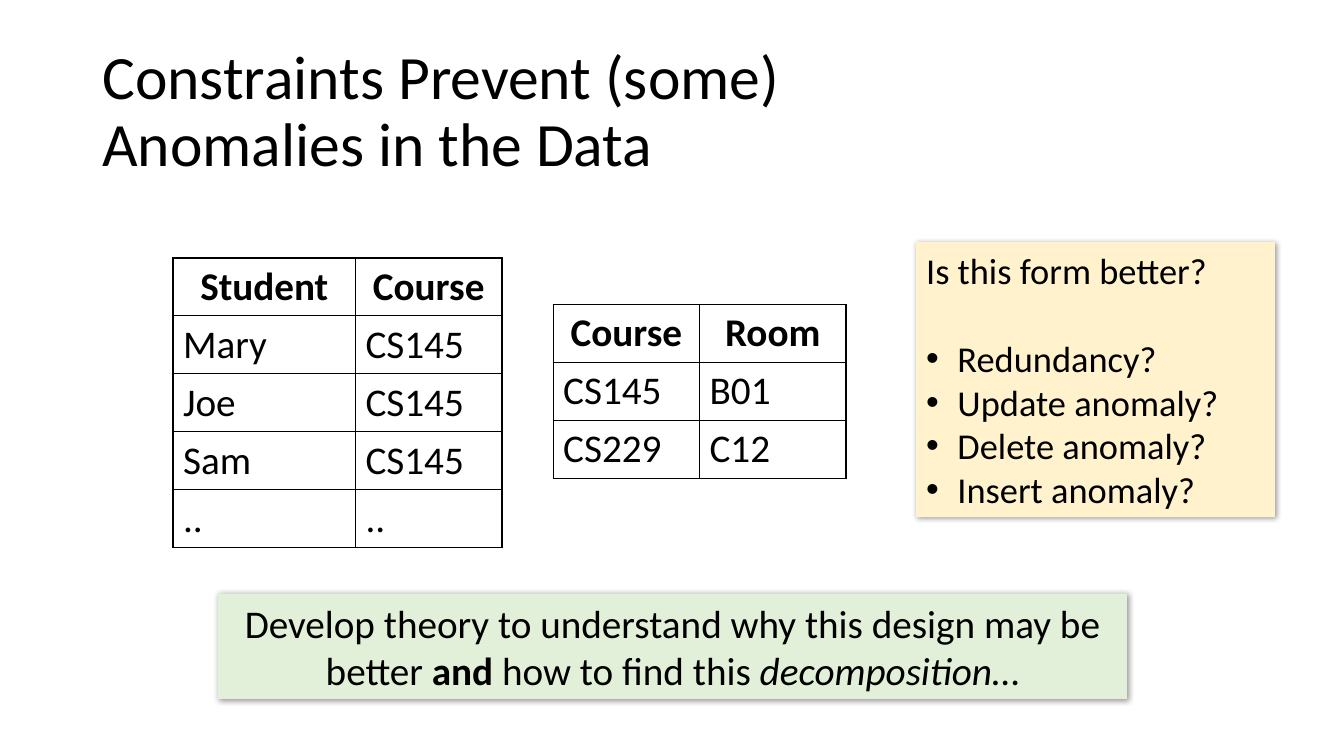
from dataclasses import dataclass

from lxml.etree import SubElement
from pptx import Presentation
from pptx.dml.color import RGBColor
from pptx.enum.shapes import MSO_SHAPE
from pptx.enum.text import MSO_ANCHOR, PP_ALIGN
from pptx.oxml.ns import qn
from pptx.util import Cm, Pt


@dataclass(frozen=True)
class Theme:
    font: str = "Calibri"
    ink: str = "000000"
    conclusion_fill: str = "E2F0D9"
    question_fill: str = "FFF2CC"
    title_size: int = 44
    body_size: int = 28
    question_size: int = 26
    question_gap: float = 31.7


class SlideBuilder:
    def __init__(self, page, theme):
        self.page = page
        self.theme = theme

    def style(self, para, size, bold=False):
        for span in para.runs:
            span.font.name = self.theme.font
            span.font.size = Pt(size)
            span.font.bold = bold
            span.font.color.rgb = RGBColor.from_string(self.theme.ink)

    def title(self, text, left, top, width, height):
        box = self.page.shapes.add_textbox(Cm(left), Cm(top), Cm(width), Cm(height))
        frame = box.text_frame
        frame.word_wrap = True
        frame.vertical_anchor = MSO_ANCHOR.MIDDLE
        para = frame.paragraphs[0]
        para.text = text
        para.line_spacing = 0.9
        self.style(para, self.theme.title_size)

    def table(self, rows, left, top, widths, row_height):
        height = row_height * len(rows)
        holder = self.page.shapes.add_table(
            len(rows), len(widths), Cm(left), Cm(top), Cm(sum(widths)), Cm(height))
        grid = holder.table
        grid.horz_banding = False
        for column, width in zip(grid.columns, widths):
            column.width = Cm(width)
        for row_index, values in enumerate(rows):
            grid.rows[row_index].height = Cm(row_height)
            for column_index, value in enumerate(values):
                self.cell(grid.cell(row_index, column_index), value, row_index == 0)

    def cell(self, cell, text, heading):
        cell.text_frame.text = text
        para = cell.text_frame.paragraphs[0]
        para.alignment = PP_ALIGN.CENTER if heading else PP_ALIGN.LEFT
        self.style(para, self.theme.body_size, bold=heading)
        properties = cell._tc.get_or_add_tcPr()
        for side in ("lnL", "lnR", "lnT", "lnB"):
            line = SubElement(properties, qn(f"a:{side}"), w=str(Pt(1)))
            fill = SubElement(line, qn("a:solidFill"))
            SubElement(fill, qn("a:srgbClr"), val=self.theme.ink)
        cell.fill.background()

    def panel(self, fill, left, top, width, height):
        box = self.page.shapes.add_shape(
            MSO_SHAPE.RECTANGLE, Cm(left), Cm(top), Cm(width), Cm(height))
        box.fill.solid()
        box.fill.fore_color.rgb = RGBColor.from_string(fill)
        box.line.fill.background()
        box.shadow.inherit = False
        effects = box.element.spPr.find(qn("a:effectLst"))
        shadow = SubElement(effects, qn("a:outerShdw"), blurRad=str(Pt(4)),
                            dist=str(Pt(1)), dir="2700000", algn="tl", rotWithShape="0")
        color = SubElement(shadow, qn("a:srgbClr"), val=self.theme.ink)
        SubElement(color, qn("a:alpha"), val="40000")
        box.text_frame.word_wrap = True
        return box.text_frame

    def conclusion(self, pieces, left, top, width, height):
        frame = self.panel(self.theme.conclusion_fill, left, top, width, height)
        para = frame.paragraphs[0]
        para.alignment = PP_ALIGN.CENTER
        for text, _ in pieces:
            para.add_run().text = text
        self.style(para, self.theme.body_size)
        for span, (_, emphasis) in zip(para.runs, pieces):
            span.font.bold = emphasis == "bold"
            span.font.italic = emphasis == "italic"

    def questions(self, heading, items, left, top, width, height):
        frame = self.panel(self.theme.question_fill, left, top, width, height)
        frame.text = "\n".join([heading, *items])
        for para in frame.paragraphs:
            para.alignment = PP_ALIGN.LEFT
            self.style(para, self.theme.question_size)
        frame.paragraphs[0].space_after = Pt(self.theme.question_gap)
        for para in frame.paragraphs[1:]:
            self.bullet(para)

    def bullet(self, para):
        properties = para._p.get_or_add_pPr()
        properties.set("marL", str(Cm(0.79)))
        properties.set("indent", str(-Cm(0.79)))
        SubElement(properties, qn("a:buFont"), typeface="Arial")
        SubElement(properties, qn("a:buChar"), char="•")


def main():
    deck = Presentation()
    deck.slide_width, deck.slide_height = Cm(33.87), Cm(19.05)
    page = deck.slides.add_slide(deck.slide_layouts[6])
    slide = SlideBuilder(page, Theme())

    slide.title("Constraints Prevent (some) \vAnomalies in the Data", 2.33, 1.01, 29.21, 3.68)

    enrolments = [("Student", "Course")]
    enrolments += [(student, "CS145") for student in ("Mary", "Joe", "Sam")]
    enrolments.append(("..", ".."))
    slide.table(enrolments, 4.36, 6.5, (4.6, 3.69), 1.46)

    rooms = [("Course", "Room"), ("CS145", "B01"), ("CS229", "C12")]
    slide.table(rooms, 13.94, 7.67, (3.69, 3.69), 1.46)

    slide.conclusion([
        ("Develop theory to understand why this design may be better ", None),
        ("and", "bold"),
        (" how to find this ", None),
        ("decomposition", "italic"),
        ("…", None),
    ], 5.49, 14.96, 22.91, 2.65)

    checks = ["Redundancy?"]
    checks += [f"{action} anomaly?" for action in ("Update", "Delete", "Insert")]
    slide.questions("Is this form better?", checks, 23.09, 6.1, 9.04, 6.93)

    deck.save("out.pptx")


if __name__ == "__main__":
    main()
